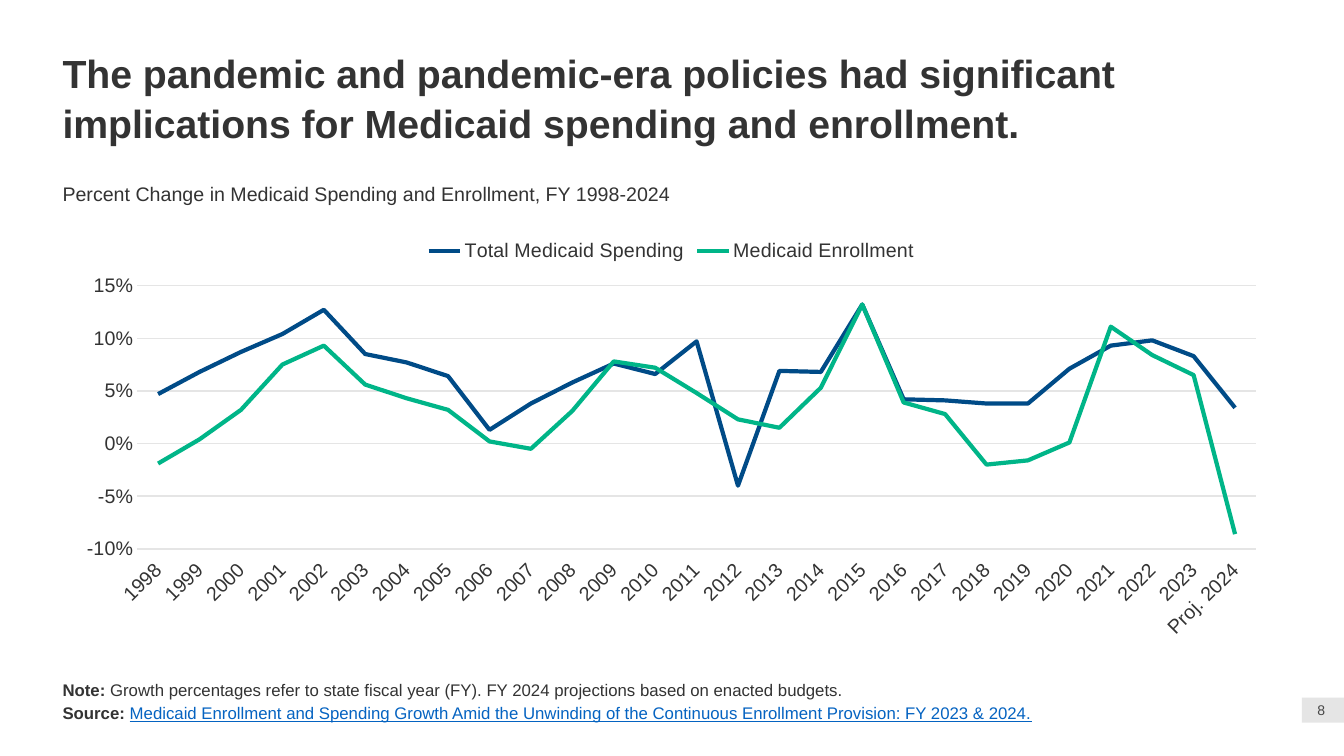
from lxml import etree
from pptx import Presentation
from pptx.chart.data import CategoryChartData
from pptx.dml.color import RGBColor
from pptx.enum.chart import XL_CHART_TYPE, XL_LEGEND_POSITION, XL_TICK_LABEL_POSITION, XL_TICK_MARK
from pptx.enum.shapes import MSO_SHAPE
from pptx.enum.text import MSO_ANCHOR, MSO_AUTO_SIZE, PP_ALIGN
from pptx.oxml.ns import qn
from pptx.util import Pt

TEXT, GRID, NAVY, GREEN, LINK, GRAY = "333333", "E5E5E5", "004B87", "00B588", "0563C1", "474747"
LEFT, CONTENT_WIDTH = 44.64, 869.76
YEARS = [str(year) for year in range(1998, 2024)] + ["Proj. 2024"]
SERIES = {
    "Total Medicaid Spending": (NAVY, [
        0.047, 0.068, 0.087, 0.104, 0.127, 0.085, 0.077, 0.064, 0.013,
        0.038, 0.058, 0.076, 0.066, 0.097, -0.04, 0.069, 0.068, 0.132,
        0.042, 0.041, 0.038, 0.038, 0.071, 0.093, 0.098, 0.083, 0.034]),
    "Medicaid Enrollment": (GREEN, [
        -0.019, 0.004, 0.032, 0.075, 0.093, 0.056, 0.043, 0.032, 0.002,
        -0.005, 0.031, 0.078, 0.072, 0.048, 0.023, 0.015, 0.053, 0.132,
        0.039, 0.028, -0.02, -0.016, 0.001, 0.111, 0.084, 0.065, -0.086]),
}


def color(value):
    """Return the colour for a hex string."""
    return RGBColor.from_string(value)


def apply(target, values):
    """Set every attribute in a dict of format values."""
    for name, value in values.items():
        setattr(target, name, value)


def format_font(font, size, hex_color=TEXT, **values):
    """Give a font its face, size, colour and further values."""
    apply(font, {"name": "Arial", "size": Pt(size), **values})
    font.color.rgb = color(hex_color)


def format_line(line, hex_color, width):
    """Give a line its colour and width."""
    line.color.rgb = color(hex_color)
    line.width = Pt(width)


def place(shape, left, top, width, height):
    """Move and size a shape in points."""
    apply(shape, {"left": Pt(left), "top": Pt(top), "width": Pt(width), "height": Pt(height)})


def write_text(shape, paragraphs, size, anchor=MSO_ANCHOR.TOP, **paragraph_values):
    """Fill a shape with paragraphs of (text, font values) runs, without bullets or margins."""
    frame = shape.text_frame
    margins = dict.fromkeys(("margin_left", "margin_top", "margin_right", "margin_bottom"), 0)
    apply(frame, {"word_wrap": True, "auto_size": MSO_AUTO_SIZE.NONE, "vertical_anchor": anchor, **margins})
    for index, runs in enumerate(paragraphs):
        paragraph = frame.add_paragraph() if index else frame.paragraphs[0]
        apply(paragraph, {"alignment": PP_ALIGN.LEFT, **paragraph_values})
        properties = paragraph._p.get_or_add_pPr()
        properties.set("marL", "0")
        properties.set("indent", "0")
        etree.SubElement(properties, qn("a:buNone"))
        for text, values in runs:
            run = paragraph.add_run()
            run.text = text
            format_font(run.font, size, **values)


def add_growth_chart(slide):
    """Add the line chart of spending and enrollment growth."""
    data = CategoryChartData(number_format="0%")
    data.categories = YEARS
    for name, (_, values) in SERIES.items():
        data.add_series(name, values)
    chart = slide.shapes.add_chart(
        XL_CHART_TYPE.LINE, Pt(LEFT), Pt(163.44), Pt(CONTENT_WIDTH), Pt(298.8), data).chart
    format_font(chart.font, 10)
    apply(chart, {"has_title": False, "has_legend": True})
    apply(chart.legend, {"position": XL_LEGEND_POSITION.TOP, "include_in_layout": False})
    format_font(chart.legend.font, 14)
    chart.plots[0].vary_by_categories = False
    for series in chart.plots[0].series:
        series.smooth = False
        format_line(series.format.line, SERIES[series.name][0], 3)
    format_axes(chart.category_axis, chart.value_axis)


def format_axes(years, growth):
    """Style the year axis and the growth axis."""
    for axis in (years, growth):
        apply(axis, {"major_tick_mark": XL_TICK_MARK.NONE, "minor_tick_mark": XL_TICK_MARK.NONE})
        format_font(axis.tick_labels.font, 14)
    years.tick_label_position = XL_TICK_LABEL_POSITION.LOW
    years._element.find(qn("c:txPr")).find(qn("a:bodyPr")).set("rot", "-2700000")
    format_line(years.format.line, GRID, 1)
    apply(growth, {"minimum_scale": -0.1, "maximum_scale": 0.15, "major_unit": 0.05,
                   "has_major_gridlines": True})
    apply(growth.tick_labels, {"number_format": "0%", "number_format_is_linked": False})
    format_line(growth.major_gridlines.format.line, GRID, 1)
    growth.format.line.fill.background()


def add_page_number(slide, number):
    """Add the page number on its gray tab at the right edge."""
    left, top, height = 930, 498.24, 18
    tab = slide.shapes.add_shape(MSO_SHAPE.RECTANGLE, Pt(left), Pt(top), Pt(30), Pt(height))
    tab.shadow.inherit = False
    tab.fill.solid()
    tab.fill.fore_color.rgb = color(GRID)
    tab.line.fill.background()
    label = slide.shapes.add_textbox(Pt(left), Pt(top), Pt(16.56), Pt(height))
    write_text(label, [[(number, {"hex_color": GRAY})]], 10, MSO_ANCHOR.MIDDLE, alignment=PP_ALIGN.RIGHT)


def main():
    """Build and save the slide."""
    presentation = Presentation()
    apply(presentation, {"slide_width": Pt(960), "slide_height": Pt(540)})
    slide = presentation.slides.add_slide(presentation.slide_layouts.get_by_name("Two Content"))
    title, subtitle, notes = slide.placeholders
    place(title, LEFT, 33.12, CONTENT_WIDTH, 72)
    write_text(title, [[("The pandemic and pandemic-era policies had significant implications "
                         "for Medicaid spending and enrollment.", {"bold": True})]],
               28, MSO_ANCHOR.MIDDLE, line_spacing=1.05)
    place(subtitle, LEFT, 131.76, CONTENT_WIDTH, 23.04)
    write_text(subtitle, [[("Percent Change in Medicaid Spending and Enrollment, FY 1998-2024", {})]],
               14, line_spacing=0.9, space_before=Pt(10))
    place(notes, LEFT, 487.44, 814.32, 28.8)
    write_text(notes, [
        [("Note: ", {"bold": True}),
         ("Growth percentages refer to state fiscal year (FY). "
          "FY 2024 projections based on enacted budgets.", {})],
        [("Source: ", {"bold": True}),
         ("Medicaid Enrollment and Spending Growth Amid the Unwinding of the Continuous "
          "Enrollment Provision: FY 2023 & 2024.", {"hex_color": LINK, "underline": True})],
    ], 12, MSO_ANCHOR.BOTTOM, space_before=Pt(0), space_after=Pt(2))
    add_growth_chart(slide)
    add_page_number(slide, "8")
    presentation.save("out.pptx")


if __name__ == "__main__":
    main()
